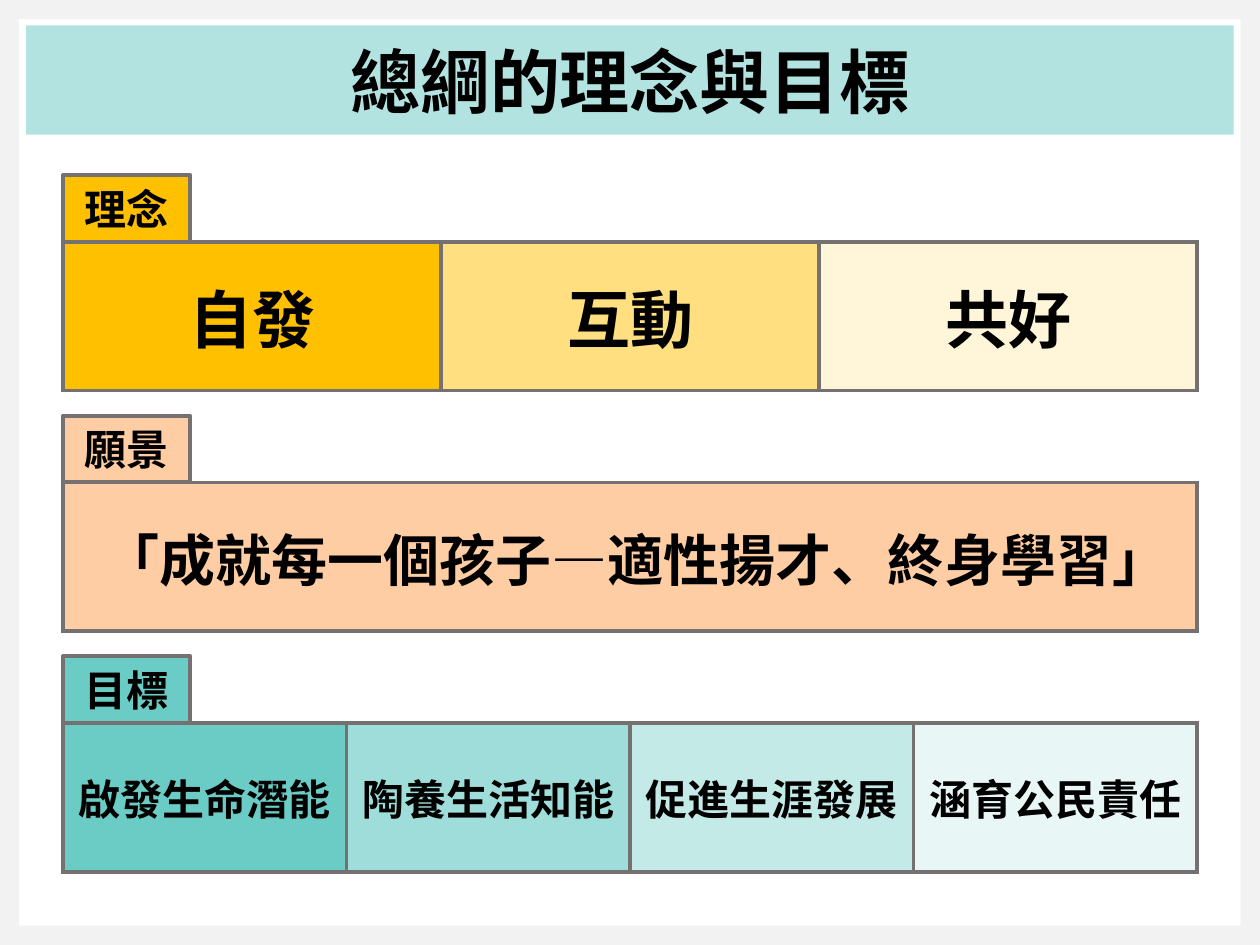
"""Build a slide on the ideals, vision and goals of the curriculum guidelines."""
import dataclasses

import lxml.etree
import pptx
import pptx.dml.color
import pptx.enum.shapes
import pptx.enum.text
import pptx.oxml.ns
import pptx.util

Pt = pptx.util.Pt
qn = pptx.oxml.ns.qn


@dataclasses.dataclass(frozen=True)
class Theme:
    font: str = "Noto Sans CJK SC"
    text: str = "000000"
    backdrop: str = "F2F2F2"
    panel: str = "FFFFFF"
    banner: str = "9FDDD9"
    border: str = "767171"
    ideal: str = "FFC000"
    vision: str = "FFCDA3"
    goal: str = "6BCBC5"
    title_size: int = 40
    ideal_size: int = 36
    vision_size: int = 32
    goal_size: int = 24
    label_size: int = 24
    border_width: float = 2.25


THEME = Theme()
LEFT, WIDTH = 36, 648
FIRST_TOP, SECTION_STEP = 100, 137.5
LABEL_WIDTH, LABEL_HEIGHT, ROW_HEIGHT = 72.7, 38.2, 85


def paint(fill, color, opacity=100):
    fill.solid()
    fill.fore_color.rgb = pptx.dml.color.RGBColor.from_string(color)
    if opacity < 100:
        tint = fill._xPr.find(qn("a:solidFill"))[0]
        lxml.etree.SubElement(tint, qn("a:alpha"), val=str(opacity * 1000))


def write(frame, wording, size):
    frame.text = wording
    paragraph = frame.paragraphs[0]
    paragraph.alignment = pptx.enum.text.PP_ALIGN.CENTER
    font = paragraph.runs[0].font
    font.name, font.size, font.bold = THEME.font, Pt(size), True
    font.color.rgb = pptx.dml.color.RGBColor.from_string(THEME.text)
    lxml.etree.SubElement(font._element, qn("a:ea"), typeface=THEME.font)


def add_box(slide, bounds, color, opacity=100, wording=None, size=None, outlined=False):
    box = slide.shapes.add_shape(
        pptx.enum.shapes.MSO_SHAPE.RECTANGLE, *(Pt(length) for length in bounds))
    box.shadow.inherit = False
    paint(box.fill, color, opacity)
    if outlined:
        paint(box.line.fill, THEME.border)
        box.line.width = Pt(THEME.border_width)
    else:
        box.line.fill.background()
    if wording:
        box.text_frame.vertical_anchor = pptx.enum.text.MSO_ANCHOR.MIDDLE
        write(box.text_frame, wording, size)


def add_borders(cell):
    properties = cell._tc.get_or_add_tcPr()
    for position, side in enumerate(("lnL", "lnR", "lnT", "lnB")):
        edge = lxml.etree.Element(qn(f"a:{side}"), w=str(Pt(THEME.border_width)))
        ink = lxml.etree.SubElement(edge, qn("a:solidFill"))
        lxml.etree.SubElement(ink, qn("a:srgbClr"), val=THEME.border)
        properties.insert(position, edge)


def add_row(slide, top, color, size, entries):
    row = slide.shapes.add_table(
        1, len(entries), Pt(LEFT), Pt(top), Pt(WIDTH), Pt(ROW_HEIGHT)).table
    row.first_row = row.horz_banding = False
    for cell, (wording, opacity) in zip(row.iter_cells(), entries):
        cell.vertical_anchor = pptx.enum.text.MSO_ANCHOR.MIDDLE
        write(cell.text_frame, wording, size)
        paint(cell.fill, color, opacity)
        add_borders(cell)


def add_section(slide, top, label, color, size, entries):
    add_row(slide, top + LABEL_HEIGHT, color, size, entries)
    add_box(slide, (LEFT, top, LABEL_WIDTH, LABEL_HEIGHT), color,
            wording=label, size=THEME.label_size, outlined=True)


def main():
    deck = pptx.Presentation()
    deck.slide_width, deck.slide_height = Pt(720), Pt(540)
    slide = deck.slides.add_slide(deck.slide_layouts[6])
    paint(slide.background.fill, THEME.backdrop)
    add_box(slide, (11, 11, 698, 518), THEME.panel)
    add_box(slide, (15, 14.5, 690, 62.5), THEME.banner, 80,
            "總綱的理念與目標", THEME.title_size)
    sections = (
        ("理念", THEME.ideal, THEME.ideal_size,
         (("自發", 100), ("互動", 50), ("共好", 15))),
        ("願景", THEME.vision, THEME.vision_size,
         ((" 「成就每一個孩子—適性揚才、終身學習」", 100),)),
        ("目標", THEME.goal, THEME.goal_size,
         (("啟發生命潛能", 100), ("陶養生活知能", 65),
          ("促進生涯發展", 40), ("涵育公民責任", 15))),
    )
    for order, section in enumerate(sections):
        add_section(slide, FIRST_TOP + order * SECTION_STEP, *section)
    deck.save("out.pptx")


if __name__ == "__main__":
    main()
